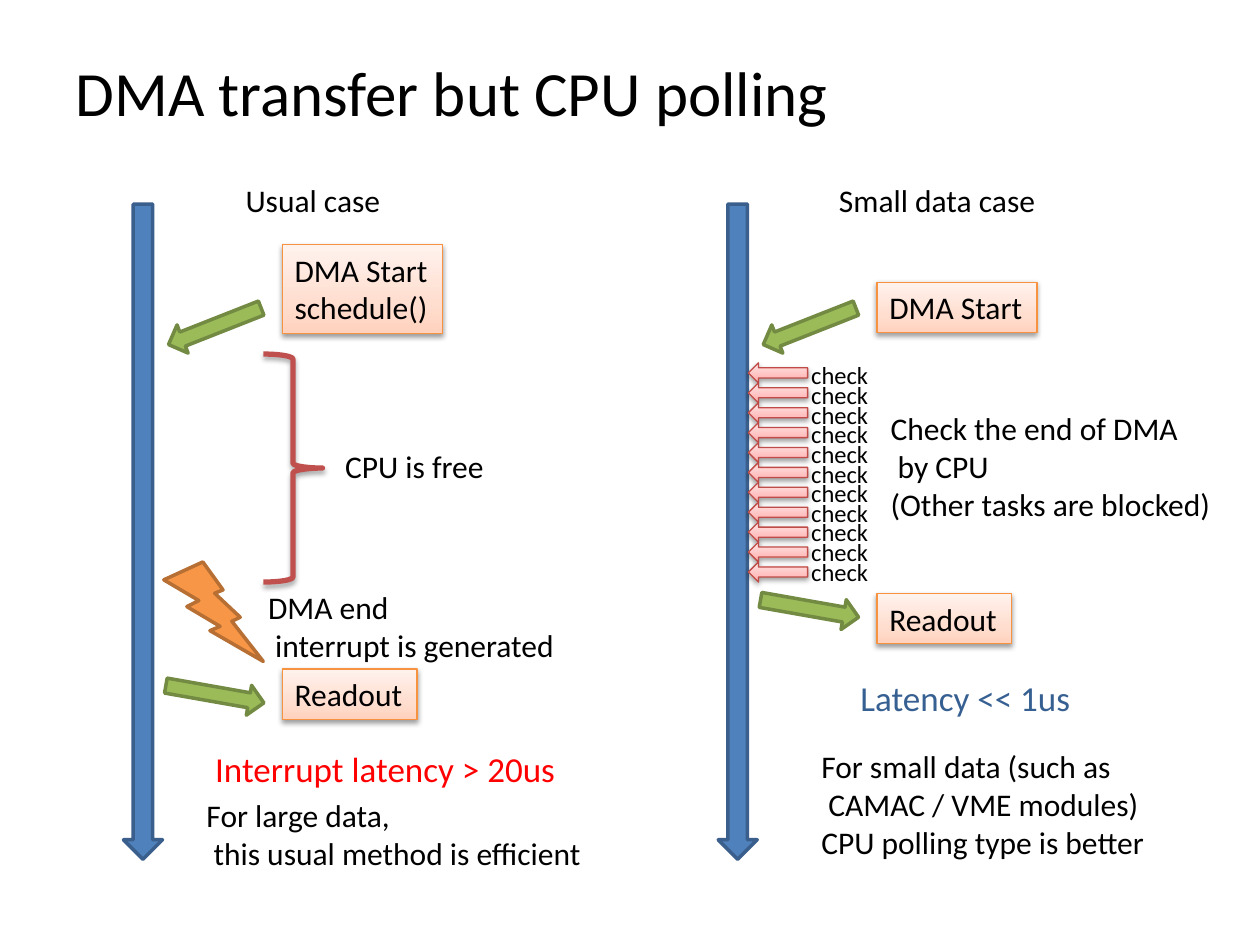
from lxml.etree import SubElement
from pptx import Presentation
from pptx.dml.color import RGBColor
from pptx.enum.shapes import MSO_SHAPE as Shape
from pptx.enum.text import MSO_ANCHOR as Anchor, MSO_AUTO_SIZE as AutoSize, PP_ALIGN as Align
from pptx.oxml.ns import qn
from pptx.util import Inches, Pt

COLORS = {
    "text": "000000", "alert": "FF0000", "good": "376092",
    "time": "4F81BD", "time_line": "3A5F8C",
    "flow": "9BBB59", "flow_line": "738A42",
    "bolt": "F79646", "bolt_line": "B76F34",
    "step_line": "F69240", "check_line": "BF4C48", "brace": "C0504D",
}
GRADIENTS = {
    "step": [(0, "FFD2BD"), (35, "FFDED0"), (100, "FFF2ED")],
    "check": [(0, "FFA6A5"), (35, "FFC0BF"), (100, "FFE7E7")],
}
COLUMNS, ROWS = 100, 75
LANE = 47.2  # columns between the two time lines
CHECKS = 11


def rgb(name):
    return RGBColor.from_string(COLORS[name])


class SlideBuilder:
    """Draws styled elements; places are in grid columns and rows."""

    font = "Calibri"

    def __init__(self, deck):
        self.cell_width = deck.slide_width / COLUMNS
        self.cell_height = deck.slide_height / ROWS
        self.page = deck.slides.add_slide(deck.slide_layouts[5])

    def place(self, column, row, width, height):
        return (round(column * self.cell_width), round(row * self.cell_height),
                round(width * self.cell_width), round(height * self.cell_height))

    def set_text(self, box, text, size, color="text"):
        frame = box.text_frame
        frame.text = text
        for para in frame.paragraphs:
            para.alignment = Align.LEFT
            for span in para.runs:
                span.font.name = self.font
                span.font.size = Pt(size)
                span.font.color.rgb = rgb(color)

    def fit(self, box):
        box.text_frame.word_wrap = False
        box.text_frame.auto_size = AutoSize.SHAPE_TO_FIT_TEXT
        box.text_frame.vertical_anchor = Anchor.TOP

    def title(self, text, *area):
        box = self.page.shapes.title
        box.left, box.top, box.width, box.height = self.place(*area)
        self.set_text(box, text, 36)
        box.text_frame.vertical_anchor = Anchor.MIDDLE

    def label(self, text, *area, size=18, color="text"):
        box = self.page.shapes.add_textbox(*self.place(*area))
        self.set_text(box, text, size, color)
        self.fit(box)

    def shape(self, kind, *area, fill=None, line, weight=2, turn=0):
        shape = self.page.shapes.add_shape(kind, *self.place(*area))
        shape.rotation = turn
        shape.shadow.inherit = False
        shape.line.color.rgb = rgb(line)
        shape.line.width = Pt(weight)
        if fill in GRADIENTS:
            self.gradient(shape, GRADIENTS[fill])
        elif fill:
            shape.fill.solid()
            shape.fill.fore_color.rgb = rgb(fill)
        else:
            shape.fill.background()
        return shape

    def gradient(self, shape, stops):
        shape.fill.gradient()
        shape.fill.gradient_angle = 90
        stop_list = shape.element.spPr.find(".//" + qn("a:gsLst"))
        for stop in list(stop_list):
            stop_list.remove(stop)
        for position, color in stops:
            stop = SubElement(stop_list, qn("a:gs"), pos=str(position * 1000))
            SubElement(stop, qn("a:srgbClr"), val=color)

    def shadow(self, shape, opacity=38, distance=1.6):
        effects = shape.element.spPr.find(qn("a:effectLst"))
        outer = SubElement(effects, qn("a:outerShdw"), blurRad=str(Pt(3.1)),
                           dist=str(Pt(distance)), dir="5400000", rotWithShape="0")
        color = SubElement(outer, qn("a:srgbClr"), val="000000")
        SubElement(color, qn("a:alpha"), val=str(opacity * 1000))

    def step(self, text, *area):
        box = self.shape(Shape.RECTANGLE, *area, fill="step", line="step_line", weight=0.75)
        self.shadow(box)
        self.set_text(box, text, 18)
        self.fit(box)

    def time_line(self, column):
        self.shape(Shape.DOWN_ARROW, column, 16.2, 3.1, 52, fill="time", line="time_line")

    def flow(self, column, row, turn):
        self.shape(Shape.RIGHT_ARROW, column, row, 7.9, 2.4,
                   fill="flow", line="flow_line", turn=turn)

    def brace(self, *area):
        self.shadow(self.shape(Shape.RIGHT_BRACE, *area, line="brace", weight=3), 35, 1.8)

    def bolt(self, *area):
        self.shape(Shape.LIGHTNING_BOLT, *area, fill="bolt", line="bolt_line")

    def check(self, index):
        arrow = self.shape(Shape.LEFT_ARROW, 59.4, 28.8 + 1.58 * index, 4.7, 1.6,
                           fill="check", line="check_line", weight=0.75)
        self.shadow(arrow)
        self.label("check", 63.4, 28.1 + 1.56 * index, 6.6, 3.4, size=14)


def main():
    deck = Presentation()
    deck.slide_width, deck.slide_height = Inches(10), Inches(7.5)
    slide = SlideBuilder(deck)
    slide.title("DMA transfer but CPU polling", 5, 3, 90, 8.5)

    # Parts shared by both lanes
    lanes = [(0, "DMA Start\nschedule()", 19.4, 7.1, 53.9, 53.1),
             (LANE, "DMA Start", 22.4, 4, 47.1, 47.1)]
    for left, start, start_row, start_height, flow_row, readout_row in lanes:
        slide.time_line(9.8 + left)
        slide.step(start, 22.4 + left, start_row, 12.7, start_height)
        slide.flow(13.1 + left, 24.7, 158.5)
        slide.flow(13.1 + left, flow_row, 10)
        slide.step("Readout", 22.4 + left, readout_row, 10.7, 4)

    # Usual case: interrupt
    slide.label("Usual case", 18.5, 13.9, 12.8, 4)
    slide.brace(20.9, 28.1, 4.7, 18.1)
    slide.label("CPU is free", 26.4, 35, 13.1, 4)
    slide.bolt(13, 44.6, 7.9, 7.9)
    slide.label("DMA end\n interrupt is generated", 20.3, 46.2, 25, 7.1)
    slide.label("Interrupt latency > 20us", 16.1, 58.8, 29.3, 4.4, size=20, color="alert")
    slide.label("For large data,\n this usual method is efficient", 15.4, 62.7, 32.1, 7.1)

    # Small data case: polling
    slide.label("Small data case", 65.6, 13.9, 17.8, 4)
    for index in range(CHECKS):
        slide.check(index)
    slide.label("Check the end of DMA\n by CPU\n(Other tasks are blocked)", 69.7, 32, 27.7, 10.1)
    slide.label("Latency << 1us", 67.3, 53.2, 18.8, 4.4, size=20, color="good")
    slide.label("For small data (such as\n CAMAC / VME modules)\nCPU polling type is better",
                64.2, 58.8, 28, 10.1)

    deck.save("out.pptx")


if __name__ == "__main__":
    main()
